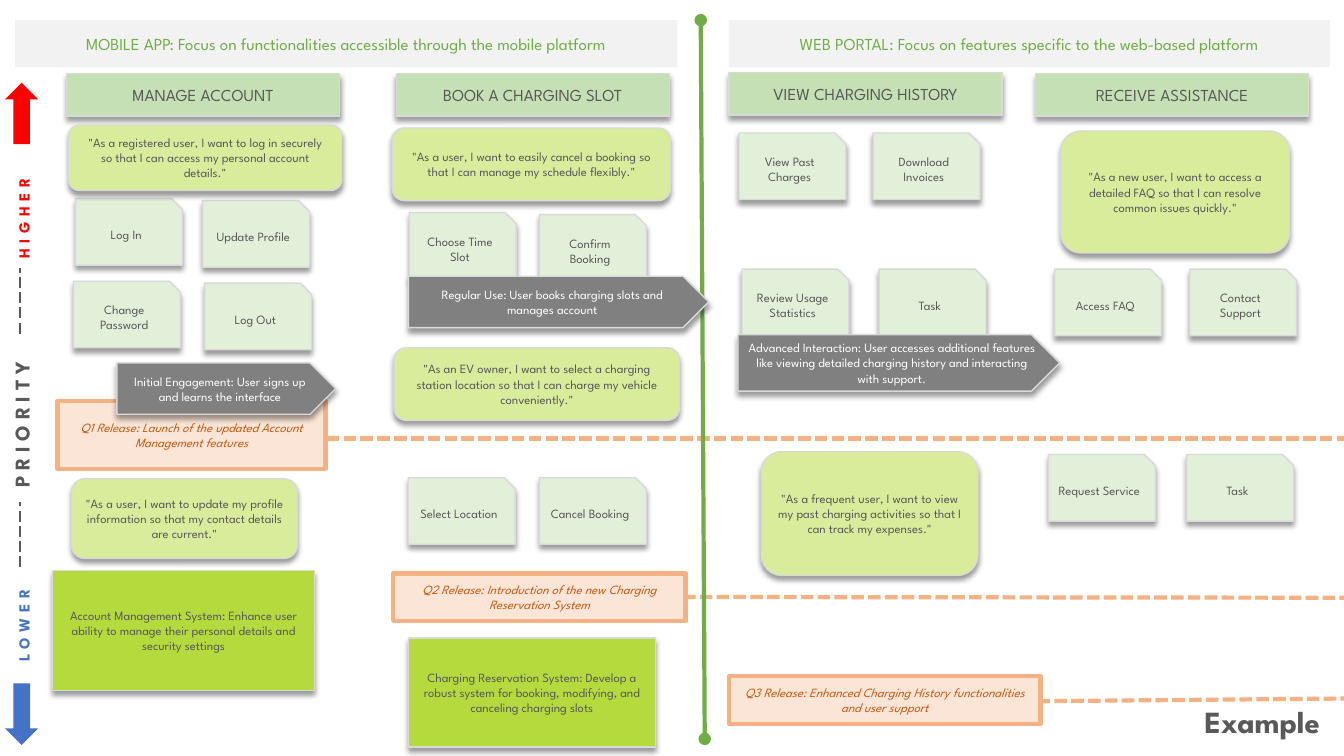
import pptx
import pptx.util
import pptx.dml.color
import pptx.enum.dml
import pptx.enum.shapes
import pptx.enum.text
import pptx.oxml.ns
from lxml import etree

SCALE = 9144
FONT = "League Spartan"
COLORS = {
    "text": "595959", "white": "FFFFFF", "edge": "D9D9D9", "band": "F2F2F2",
    "green": "70AD47", "activity": "C5E0B4", "task": "E2F0D9", "story": "D9EC9C",
    "epic": "B5DA3E", "journey": "808080", "release": "FBE5D6", "dash": "F4B183",
    "rust": "C55A11", "red": "FF0000", "blue": "4472C4",
}
SHAPE = pptx.enum.shapes.MSO_SHAPE
ALIGN = pptx.enum.text.PP_ALIGN
DASH = pptx.enum.dml.MSO_LINE
qn = pptx.oxml.ns.qn


def px(n):
    return pptx.util.Emu(n * SCALE)


def rgb(name):
    return pptx.dml.color.RGBColor.from_string(COLORS[name])


class Board:
    def __init__(self, prs):
        self.s = prs.slides.add_slide(prs.slide_layouts[6])

    def shape(self, kind, box, fill, edge=None, width=1, rotation=0):
        sp = self.s.shapes.add_shape(kind, *map(px, box))
        sp.rotation = rotation
        sp.fill.solid()
        sp.fill.fore_color.rgb = rgb(fill)
        if edge:
            sp.line.color.rgb = rgb(edge)
            sp.line.width = pptx.util.Pt(width)
        else:
            sp.line.fill.background()
        sp.shadow.inherit = False
        return sp

    def set_text(self, sp, text, size, color, align=ALIGN.CENTER, bold=False, italic=False):
        tf = sp.text_frame
        tf.word_wrap = True
        p = tf.paragraphs[0]
        p.text = text
        p.alignment = align
        p.font.name = FONT
        p.font.size = pptx.util.Pt(size)
        p.font.bold = bold
        p.font.italic = italic
        p.font.color.rgb = rgb(color)

    def band(self, box, text):
        self.set_text(self.shape(SHAPE.RECTANGLE, box, "band"), text, 12, "green")

    def card(self, kind, fill, box, text, size=9, color="text"):
        sp = self.shape(kind, box, fill, "edge")
        effects = sp._element.spPr.find(qn("a:effectLst"))
        shadow = etree.SubElement(effects, qn("a:outerShdw"), blurRad="50800",
                                  dist="38100", dir="5400000", algn="t", rotWithShape="0")
        black = etree.SubElement(shadow, qn("a:srgbClr"), val="000000")
        etree.SubElement(black, qn("a:alpha"), val="40000")
        self.set_text(sp, text, size, color)

    def line(self, ends, color, width, dash=None, oval=False):
        c = self.s.shapes.add_connector(pptx.enum.shapes.MSO_CONNECTOR.STRAIGHT, *map(px, ends))
        c.line.color.rgb = rgb(color)
        c.line.width = pptx.util.Pt(width)
        if dash:
            c.line.dash_style = dash
        if oval:
            for end in ("a:headEnd", "a:tailEnd"):
                etree.SubElement(c.line._get_or_add_ln(), qn(end), type="oval")
        etree.SubElement(c._element.spPr, qn("a:effectLst"))

    def release(self, box, text, ends):
        self.line(ends, "dash", 3, DASH.SQUARE_DOT)
        sp = self.shape(SHAPE.RECTANGLE, box, "release", "dash", 3)
        self.set_text(sp, text, 9, "rust", italic=True)

    def axis(self, box, words, stops):
        sp = self.shape(SHAPE.RECTANGLE, box, "white", rotation=270)
        p = sp.text_frame.paragraphs[0]
        p.alignment = ALIGN.LEFT
        tabs = etree.SubElement(p._p.get_or_add_pPr(), qn("a:tabLst"))
        for stop in stops:
            etree.SubElement(tabs, qn("a:tab"), pos=str(px(stop)), algn="l")
        p.font.name = FONT
        p.font.bold = True
        for word, size, color in words:
            r = p.add_run()
            r.text = word
            r.font.size = pptx.util.Pt(size)
            r.font.color.rgb = rgb(color)
            r._r.get_or_add_rPr().set("spc", "400")

    def label(self, box, text, size):
        sp = self.s.shapes.add_textbox(*map(px, box))
        self.set_text(sp, text, size, "text", ALIGN.RIGHT, bold=True)


BANDS = [
    ((15, 20, 657, 47), "MOBILE APP: Focus on functionalities accessible through the mobile platform"),
    ((723, 20, 596, 47), "WEB PORTAL: Focus on features specific to the web-based platform"),
]
ACTIVITIES = [
    (66, 73, "MANAGE ACCOUNT"), (393, 73, "BOOK A CHARGING SLOT"),
    (723, 72, "VIEW CHARGING HISTORY"), (1027, 73, "RECEIVE ASSISTANCE"),
]
TASKS = [
    (75, 197, "Log In"), (201, 199, "Update Profile"),
    (73, 279, "Change Password"), (203, 281, "Log Out"),
    (406, 211, "Choose Time Slot"), (535, 213, "Confirm Booking"),
    (405, 474, "Select Location"), (535, 474, "Cancel Booking"),
    (733, 132, "View Past Charges"), (866, 132, "Download Invoices"),
    (736, 267, "Review Usage Statistics"), (872, 267, "Task"),
    (1046, 267, "Access FAQ"), (1180, 267, "Contact Support"),
    (1040, 451, "Request Service"), (1177, 451, "Task"),
]
STORIES = [
    ((68, 124, 271, 65), '"As a registered user, I want to log in securely so that I can access my personal account details."'),
    ((71, 475, 224, 79), '"As a user, I want to update my profile information so that my contact details are current."'),
    ((391, 345, 283, 72), '"As an EV owner, I want to select a charging station location so that I can charge my vehicle conveniently."'),
    ((389, 127, 276, 72), '"As a user, I want to easily cancel a booking so that I can manage my schedule flexibly."'),
    ((755, 448, 215, 123), '"As a frequent user, I want to view my past charging activities so that I can track my expenses."'),
    ((1052, 130, 227, 121), '"As a new user, I want to access a detailed FAQ so that I can resolve common issues quickly."'),
]
EPICS = [
    ((52, 566, 260, 119), "Account Management System: Enhance user ability to manage their personal details and security settings"),
    ((405, 633, 245, 108), "Charging Reservation System: Develop a robust system for booking, modifying, and canceling charging slots"),
]
RELEASES = [
    ((57, 398, 266, 67), "Q1 Release: Launch of the updated Account Management features", (57, 435, 1333, 435)),
    ((390, 569, 290, 47), "Q2 Release: Introduction of the new Charging Reservation System", (427, 592, 1333, 593)),
    ((723, 671, 309, 47), "Q3 Release: Enhanced Charging History functionalities and user support", (762, 698, 1333, 693)),
]
JOURNEYS = [
    ((732, 332, 319, 56), "Advanced Interaction: User accesses additional features like viewing detailed charging history and interacting with support."),
    ((405, 274, 298, 51), "Regular Use: User books charging slots and manages account"),
    ((116, 360, 217, 51), "Initial Engagement: User signs up and learns the interface"),
]


def main():
    prs = pptx.Presentation()
    prs.slide_width, prs.slide_height = px(1333), px(750)
    board = Board(prs)
    for box, text in BANDS:
        board.band(box, text)
    for x, y, text in ACTIVITIES:
        board.card(SHAPE.RECTANGLE, "activity", (x, y, 271, 42), text, 12)
    for x, y, text in TASKS:
        board.card(SHAPE.SNIP_1_RECTANGLE, "task", (x, y, 106, 66), text)
    for box, text in STORIES:
        board.card(SHAPE.ROUNDED_RECTANGLE, "story", box, text)
    for box, text in EPICS:
        board.card(SHAPE.RECTANGLE, "epic", box, text)
    for box, text, ends in RELEASES:
        board.release(box, text, ends)
    board.line((695, 20, 699, 733), "green", 3, oval=True)
    for box, text in JOURNEYS:
        board.card(SHAPE.PENTAGON, "journey", box, text, color="white")

    board.axis((-273, 359, 588, 27),
               [("LOWER", 11, "blue"), ("\tPRIORITY", 15, "text"), ("\tHIGHER", 11, "red")],
               (173, 400))
    board.shape(SHAPE.UP_ARROW, (5, 678, 33, 61), "blue", rotation=180)
    board.shape(SHAPE.UP_ARROW, (5, 82, 33, 61), "red")
    for y in (331, 563):
        board.line((20, y, 20, y - 65), "text", 1, DASH.LONG_DASH)
    board.label((511, 692, 808, 47), "Example", 22)
    prs.save("out.pptx")


if __name__ == "__main__":
    main()
